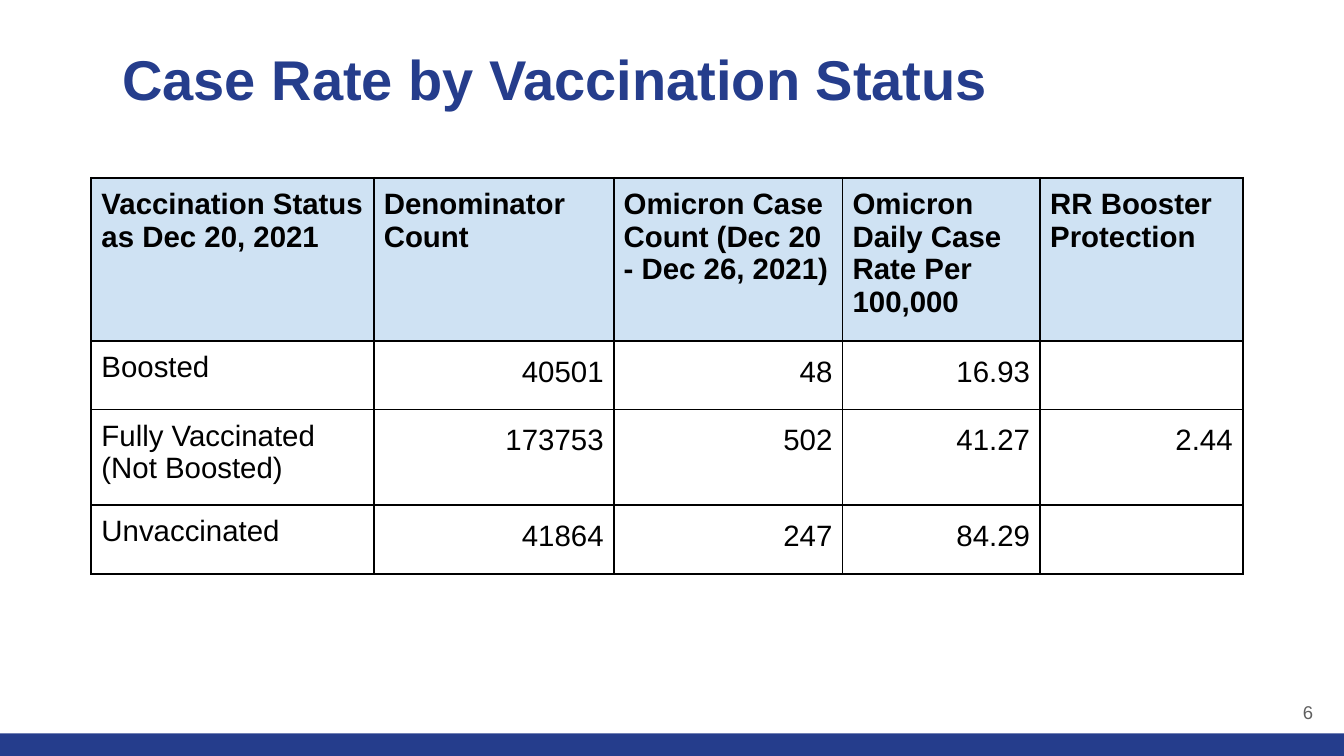
import pptx
import pptx.dml.color
import pptx.enum.shapes
import pptx.enum.text
import pptx.oxml
import pptx.oxml.ns
import pptx.util

SLIDE_WIDTH, SLIDE_HEIGHT = 13.33, 7.5
FONT = "Arial"
NAVY, PALE_BLUE, BLACK, GREY = "253D8C", "CFE2F3", "000000", "5F5F5F"
ALIGN = pptx.enum.text.PP_ALIGN
ANCHOR = pptx.enum.text.MSO_ANCHOR

COLUMN_WIDTHS = [2.8, 2.38, 2.27, 1.96, 2.01]
ROW_HEIGHTS = [1.62, 0.68, 0.95, 0.68]
CASE_RATES = [
    ["Vaccination Status as Dec 20, 2021", "Denominator Count",
     "Omicron Case Count (Dec 20 - Dec 26, 2021)",
     "Omicron Daily Case Rate Per 100,000", "RR Booster Protection"],
    ["Boosted", "40501", "48", "16.93", ""],
    ["Fully Vaccinated (Not Boosted)", "173753", "502", "41.27", "2.44"],
    ["Unvaccinated", "41864", "247", "84.29", ""],
]


def color(hex_code):
    return pptx.dml.color.RGBColor.from_string(hex_code)


def across(share):
    return pptx.util.Inches(SLIDE_WIDTH * share)


def down(share):
    return pptx.util.Inches(SLIDE_HEIGHT * share)


def write(frame, text, size, hex_code, bold=False, align=ALIGN.LEFT):
    frame.word_wrap = True
    frame.text = text
    line = frame.paragraphs[0]
    line.alignment = align
    line.font.size = pptx.util.Pt(size)
    for run in line.runs:
        run.font.name = FONT
        run.font.size = pptx.util.Pt(size)
        run.font.bold = bold
        run.font.color.rgb = color(hex_code)
    return line


def clear_insets(frame):
    frame.margin_left = frame.margin_right = 0
    frame.margin_top = frame.margin_bottom = 0


def add_footer_band(slide):
    band = slide.shapes.add_shape(pptx.enum.shapes.MSO_SHAPE.RECTANGLE,
                                  0, down(0.97), across(1), down(0.03))
    band.shadow.inherit = False
    band.fill.solid()
    band.fill.fore_color.rgb = color(NAVY)
    band.line.fill.background()


def set_title(slide, text):
    title = slide.shapes.title
    title.left, title.top = across(0.091), down(0.059)
    title.width, title.height = across(0.818), down(0.089)
    frame = title.text_frame
    clear_insets(frame)
    frame.auto_size = pptx.enum.text.MSO_AUTO_SIZE.NONE
    frame.vertical_anchor = ANCHOR.TOP
    write(frame, text, 40, NAVY, bold=True)


def add_page_number(slide, number):
    box = slide.shapes.add_textbox(across(0.909), down(0.897),
                                   across(0.068), down(0.059))
    clear_insets(box.text_frame)
    box.text_frame.vertical_anchor = ANCHOR.BOTTOM
    write(box.text_frame, number, 13.2, GREY, align=ALIGN.RIGHT)


def add_borders(cell, hex_code, width):
    properties = cell._tc.get_or_add_tcPr()
    for side in ("lnL", "lnR", "lnT", "lnB"):
        properties.append(pptx.oxml.parse_xml(
            f'<a:{side} {pptx.oxml.ns.nsdecls("a")} w="{pptx.util.Pt(width)}">'
            f'<a:solidFill><a:srgbClr val="{hex_code}"/></a:solidFill></a:{side}>'))


def format_cell(cell, text, is_header, is_number):
    cell.margin_left = cell.margin_right = pptx.util.Inches(0.1)
    cell.margin_top = cell.margin_bottom = pptx.util.Inches(0.1)
    cell.vertical_anchor = ANCHOR.TOP
    add_borders(cell, BLACK, 1.5)
    if is_header:
        cell.fill.solid()
        cell.fill.fore_color.rgb = color(PALE_BLUE)
    else:
        cell.fill.background()
    line = write(cell.text_frame, text, 21, BLACK, bold=is_header,
                 align=ALIGN.RIGHT if is_number else ALIGN.LEFT)
    if is_number:
        line.line_spacing = 1.15


def add_rate_table(slide, rows):
    rates = slide.shapes.add_table(
        len(ROW_HEIGHTS), len(COLUMN_WIDTHS), across(0.068), down(0.235),
        pptx.util.Inches(sum(COLUMN_WIDTHS)),
        pptx.util.Inches(sum(ROW_HEIGHTS))).table
    for column, width in zip(rates.columns, COLUMN_WIDTHS):
        column.width = pptx.util.Inches(width)
    for row, height in zip(rates.rows, ROW_HEIGHTS):
        row.height = pptx.util.Inches(height)
    for r, row in enumerate(rows):
        for c, text in enumerate(row):
            format_cell(rates.cell(r, c), text, is_header=r == 0,
                        is_number=r > 0 and c > 0)


def main():
    deck = pptx.Presentation()
    deck.slide_width, deck.slide_height = across(1), down(1)
    slide = deck.slides.add_slide(deck.slide_layouts.get_by_name("Title Only"))

    # Frame of the slide
    add_footer_band(slide)
    set_title(slide, "Case Rate by Vaccination Status")
    add_page_number(slide, "6")

    # Case rates
    add_rate_table(slide, CASE_RATES)

    deck.save("out.pptx")


if __name__ == "__main__":
    main()
